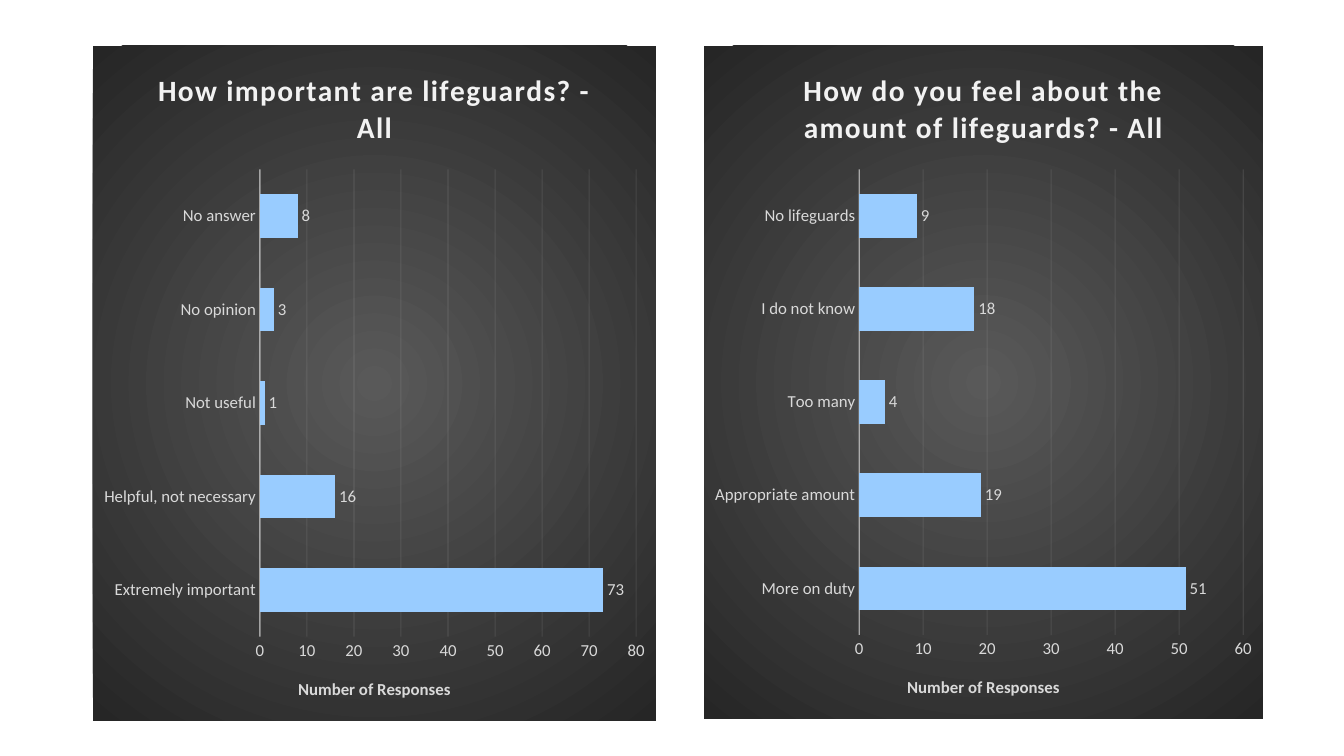
from dataclasses import dataclass

from lxml import etree
from pptx import Presentation
from pptx.chart.axis import CategoryAxis, ValueAxis
from pptx.chart.chart import Chart
from pptx.chart.data import CategoryChartData
from pptx.dml.color import RGBColor
from pptx.dml.line import LineFormat
from pptx.enum.chart import XL_CHART_TYPE, XL_LABEL_POSITION, XL_TICK_MARK
from pptx.oxml import parse_xml
from pptx.oxml.ns import nsdecls, qn
from pptx.slide import Slide
from pptx.text.text import Font, TextFrame
from pptx.util import Emu, Pt

BAR_CLUSTERED = XL_CHART_TYPE.BAR_CLUSTERED
OUTSIDE_END = XL_LABEL_POSITION.OUTSIDE_END
NO_TICK = XL_TICK_MARK.NONE

EMU_PER_PX = 914400 / 100.8
PAGE_WIDTH, PAGE_HEIGHT = 1344, 756
BLANK_LAYOUT = 6


@dataclass(frozen=True)
class Theme:
    font: str = "Calibri"
    title_size: int = 21
    text_size: int = 12
    title_color: str = "F2F2F2"
    text_color: str = "D9D9D9"
    line_color: str = "F2F2F2"
    bar_color: str = "99CCFF"
    panel_center: str = "595959"
    panel_edge: str = "262626"


@dataclass(frozen=True)
class SurveyChart:
    title: str
    left: int
    top: int
    width: int
    height: int
    axis_maximum: int
    answers: dict[str, int]


THEME = Theme()

# Answers run from the bottom bar to the top bar
SURVEY_CHARTS = [
    SurveyChart(
        "How important are lifeguards? - All", 93, 46, 563, 675, 80,
        {"Extremely important": 73, "Helpful, not necessary": 16,
         "Not useful": 1, "No opinion": 3, "No answer": 8},
    ),
    SurveyChart(
        "How do you feel about the amount of lifeguards? - All",
        704, 46, 559, 673, 60,
        {"More on duty": 51, "Appropriate amount": 19,
         "Too many": 4, "I do not know": 18, "No lifeguards": 9},
    ),
]


def px(length: int) -> Emu:
    return Emu(round(length * EMU_PER_PX))


def format_font(font: Font, *, size: int = THEME.text_size,
                color: str = THEME.text_color, bold: bool = False) -> None:
    font.name = THEME.font
    font.size = Pt(size)
    font.bold = bold
    font.color.rgb = RGBColor.from_string(color)


def write_text(frame: TextFrame, text: str, *, size: int = THEME.text_size,
               color: str = THEME.text_color, bold: bool = True,
               spacing: int = 0) -> None:
    """Fill the frame; spacing is in hundredths of a point."""
    span = frame.paragraphs[0].add_run()
    span.text = text
    format_font(span.font, size=size, color=color, bold=bold)
    if spacing:
        span._r.get_or_add_rPr().set("spc", str(spacing))


def format_line(line: LineFormat, width: float, opacity: int) -> None:
    line.width = Pt(width)
    line.color.rgb = RGBColor.from_string(THEME.line_color)
    color = line._get_or_add_ln().find(".//" + qn("a:srgbClr"))
    etree.SubElement(color, qn("a:alpha")).set("val", str(opacity * 1000))


def fill_panel(chart: Chart) -> None:
    """Give the chart area a gradient that darkens from its center."""
    properties = parse_xml(
        f'<c:spPr {nsdecls("c", "a")}><a:gradFill><a:gsLst>'
        f'<a:gs pos="0"><a:srgbClr val="{THEME.panel_center}"/></a:gs>'
        f'<a:gs pos="100000"><a:srgbClr val="{THEME.panel_edge}"/></a:gs>'
        '</a:gsLst><a:path path="circle">'
        '<a:fillToRect l="50000" t="50000" r="50000" b="50000"/></a:path>'
        '</a:gradFill><a:ln><a:noFill/></a:ln></c:spPr>'
    )
    chart._chartSpace.find(qn("c:chart")).addnext(properties)


def format_axis(axis: CategoryAxis | ValueAxis) -> None:
    axis.major_tick_mark = NO_TICK
    axis.minor_tick_mark = NO_TICK
    format_font(axis.tick_labels.font)


def add_survey_chart(page: Slide, survey: SurveyChart) -> None:
    data = CategoryChartData()
    data.categories = list(survey.answers)
    data.add_series("Series 1", list(survey.answers.values()))
    chart = page.shapes.add_chart(
        BAR_CLUSTERED, px(survey.left), px(survey.top),
        px(survey.width), px(survey.height), data,
    ).chart

    # Panel and title
    chart.has_legend = False
    format_font(chart.font)
    fill_panel(chart)
    write_text(chart.chart_title.text_frame, survey.title,
               size=THEME.title_size, color=THEME.title_color, spacing=100)
    chart.chart_title.include_in_layout = False

    # Axes
    format_axis(chart.category_axis)
    format_line(chart.category_axis.format.line, 1, 54)
    chart.category_axis.has_major_gridlines = False
    values = chart.value_axis
    format_axis(values)
    values.minimum_scale, values.maximum_scale = 0, survey.axis_maximum
    values.major_unit = 10
    values.format.line.fill.background()
    values.has_major_gridlines = True
    format_line(values.major_gridlines.format.line, 0.75, 10)
    write_text(values.axis_title.text_frame, "Number of Responses")

    # Bars and their values
    plot = chart.plots[0]
    plot.gap_width, plot.overlap = 115, -20
    plot.vary_by_categories = False
    bars = plot.series[0]
    bars.format.fill.solid()
    bars.format.fill.fore_color.rgb = RGBColor.from_string(THEME.bar_color)
    labels = bars.data_labels
    labels.show_value = True
    labels.position = OUTSIDE_END
    format_font(labels.font)


def main() -> None:
    deck = Presentation()
    deck.slide_width, deck.slide_height = px(PAGE_WIDTH), px(PAGE_HEIGHT)
    page = deck.slides.add_slide(deck.slide_layouts[BLANK_LAYOUT])
    for survey in SURVEY_CHARTS:
        add_survey_chart(page, survey)
    deck.save("out.pptx")


if __name__ == "__main__":
    main()
